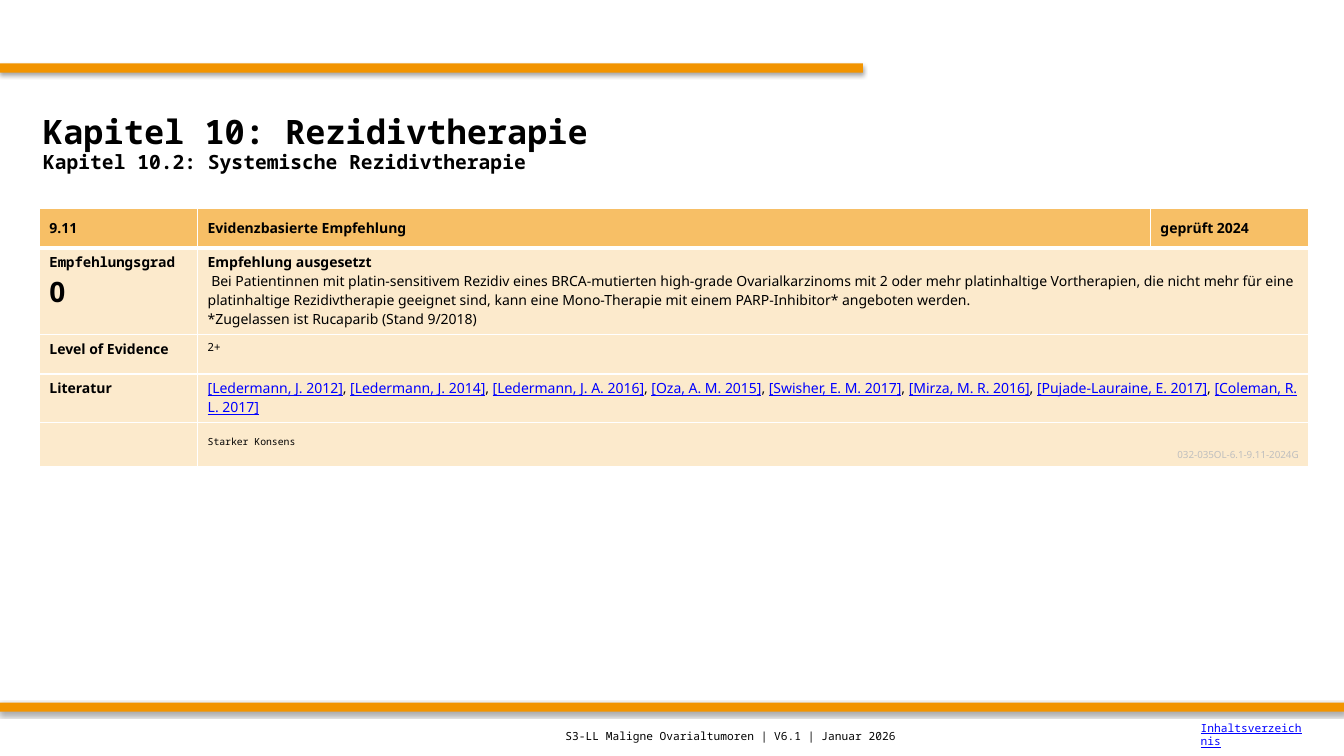
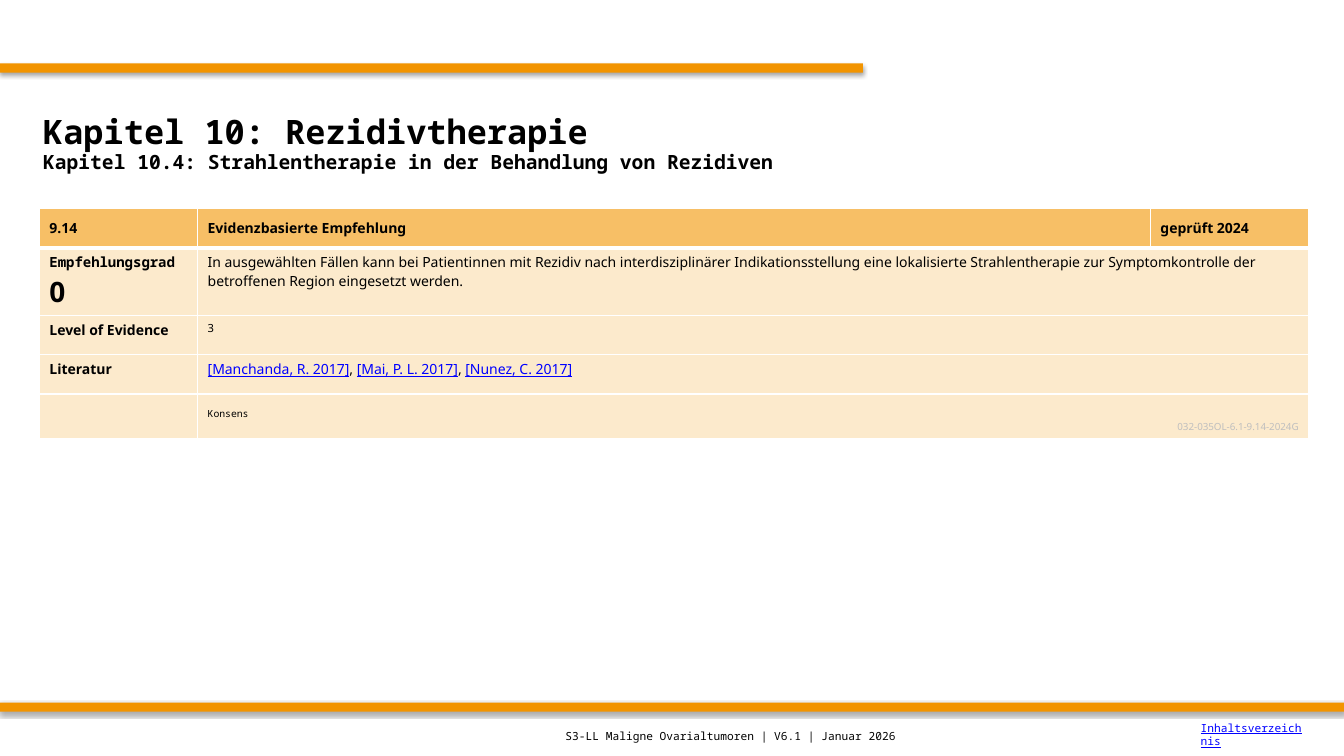
from dataclasses import dataclass, replace

from lxml import etree
from pptx import Presentation
from pptx.dml.color import RGBColor
from pptx.enum.shapes import MSO_SHAPE
from pptx.enum.text import MSO_ANCHOR, PP_ALIGN
from pptx.oxml.ns import qn
from pptx.util import Inches, Pt

SANS, MONO = "Noto Sans", "Noto Sans Mono"
ORANGE, HEADER_FILL, BODY_FILL = "F29400", "F7BF66", "FCEACC"
BLACK, WHITE, LINK_BLUE, GREY = "000000", "FFFFFF", "0000FF", "BFBFBF"

SLIDE_WIDTH, SLIDE_HEIGHT = 13.33, 7.5
COLUMN_WIDTHS = (1.57, 9.45, 1.57)
ROW_HEIGHT, CONSENSUS_HEIGHT = 0.39, 0.44
CHAPTER = "Kapitel 10: Rezidivtherapie"
FOOTER = "S3-LL Maligne Ovarialtumoren | V6.1 | Januar 2026"


@dataclass(frozen=True)
class Style:
    size: float
    name: str = SANS
    color: str = BLACK
    bold: bool = False
    underline: bool = False


TITLE = Style(24, MONO, bold=True)
SUBTITLE = replace(TITLE, size=14)
BODY = Style(10)
LABEL = replace(BODY, bold=True)
MONO_LABEL = replace(LABEL, name=MONO)
GRADE = replace(LABEL, size=20)
EVIDENCE = Style(8)
CITATION = replace(BODY, color=LINK_BLUE, underline=True)
CONSENSUS = Style(7, MONO)
CODE = Style(7, color=GREY)
FOOTER_TEXT = Style(8, MONO)
FOOTER_LINK = replace(FOOTER_TEXT, color=LINK_BLUE, underline=True)


@dataclass(frozen=True)
class Recommendation:
    subtitle: str
    number: str
    statement: tuple
    statement_height: float
    evidence: str
    literature: tuple
    literature_height: float
    consensus: str


RECOMMENDATIONS = (
    Recommendation(
        subtitle="Kapitel 10.2: Systemische Rezidivtherapie",
        number="9.11",
        statement=(
            ("Empfehlung ausgesetzt", LABEL),
            (" Bei Patientinnen mit platin-sensitivem Rezidiv eines BRCA-mutierten "
             "high-grade Ovarialkarzinoms mit 2 oder mehr platinhaltige Vortherapien, "
             "die nicht mehr für eine platinhaltige Rezidivtherapie geeignet sind, kann "
             "eine Mono-Therapie mit einem PARP-Inhibitor* angeboten werden.", BODY),
            ("*Zugelassen ist Rucaparib (Stand 9/2018)", BODY),
        ),
        statement_height=0.86,
        evidence="2+",
        literature=(
            "[Ledermann, J. 2012]", "[Ledermann, J. 2014]", "[Ledermann, J. A. 2016]",
            "[Oza, A. M. 2015]", "[Swisher, E. M. 2017]", "[Mirza, M. R. 2016]",
            "[Pujade-Lauraine, E. 2017]", "[Coleman, R. L. 2017]",
        ),
        literature_height=0.48,
        consensus="Starker Konsens",
    ),
    Recommendation(
        subtitle="Kapitel 10.4: Strahlentherapie in der Behandlung von Rezidiven",
        number="9.14",
        statement=(
            ("In ausgewählten Fällen kann bei Patientinnen mit Rezidiv nach "
             "interdisziplinärer Indikationsstellung eine lokalisierte Strahlentherapie "
             "zur Symptomkontrolle der betroffenen Region eingesetzt werden.", BODY),
        ),
        statement_height=0.67,
        evidence="3",
        literature=("[Manchanda, R. 2017]", "[Mai, P. L. 2017]", "[Nunez, C. 2017]"),
        literature_height=ROW_HEIGHT,
        consensus="Konsens",
    ),
)


def rgb(color):
    return RGBColor.from_string(color)


def add_run(paragraph, text, style):
    run = paragraph.add_run()
    run.text = text
    run.font.size = Pt(style.size)
    run.font.name = style.name
    run.font.bold = style.bold
    run.font.underline = style.underline
    run.font.color.rgb = rgb(style.color)


def write_lines(text_frame, lines):
    """Write one paragraph for each (text, style) pair."""
    for index, (text, style) in enumerate(lines):
        paragraph = text_frame.add_paragraph() if index else text_frame.paragraphs[0]
        add_run(paragraph, text, style)


def add_text(slide, box, *lines):
    shape = slide.shapes.add_textbox(*map(Inches, box))
    text_frame = shape.text_frame
    text_frame.word_wrap = True
    text_frame.vertical_anchor = MSO_ANCHOR.MIDDLE
    write_lines(text_frame, lines)
    return text_frame


def add_band(slide, top, width):
    band = slide.shapes.add_shape(
        MSO_SHAPE.RECTANGLE, Inches(0), Inches(top), Inches(width), Inches(0.09))
    band.fill.solid()
    band.fill.fore_color.rgb = rgb(ORANGE)
    band.line.fill.background()
    band.shadow.inherit = False
    effects = band.element.spPr.find(qn("a:effectLst"))
    shadow = etree.SubElement(
        effects, qn("a:outerShdw"), blurRad=str(Pt(3.1)), dist=str(Pt(1.8)),
        dir="5400000", algn="t", rotWithShape="0")
    color = etree.SubElement(shadow, qn("a:srgbClr"), val=BLACK)
    etree.SubElement(color, qn("a:alpha"), val="35000")


def add_frame(slide):
    """Add the bands and footer that every slide carries."""
    add_band(slide, 0.63, 8.56)
    add_band(slide, 6.97, SLIDE_WIDTH)
    add_text(slide, (5.51, 7.11, 5.51, 0.39), (FOOTER, FOOTER_TEXT))
    add_text(slide, (11.81, 7.09, 1.22, 0.39), ("Inhaltsverzeichnis", FOOTER_LINK))


def add_title(slide, box, subtitle):
    text_frame = add_text(slide, box, (CHAPTER, TITLE), (subtitle, SUBTITLE))
    for paragraph in text_frame.paragraphs:
        paragraph.line_spacing = 0.9


def style_cell(cell, fill, bottom_width):
    properties = cell._tc.get_or_add_tcPr()
    for side, width in (("L", 1), ("R", 1), ("T", 1), ("B", bottom_width)):
        line = etree.SubElement(properties, qn(f"a:ln{side}"), w=str(Pt(width)))
        solid = etree.SubElement(line, qn("a:solidFill"))
        etree.SubElement(solid, qn("a:srgbClr"), val=WHITE)
    cell.fill.solid()
    cell.fill.fore_color.rgb = rgb(fill)


def write_literature(cell, citations):
    paragraph = cell.text_frame.paragraphs[0]
    for index, citation in enumerate(citations):
        if index:
            add_run(paragraph, ", ", BODY)
        add_run(paragraph, citation, CITATION)


def add_recommendation_table(slide, left, top, recommendation):
    heights = (ROW_HEIGHT, recommendation.statement_height, ROW_HEIGHT,
               recommendation.literature_height, CONSENSUS_HEIGHT)
    table = slide.shapes.add_table(
        len(heights), len(COLUMN_WIDTHS), Inches(left), Inches(top),
        Inches(sum(COLUMN_WIDTHS)), Inches(sum(heights))).table
    table.first_row = table.horz_banding = False
    for column, width in zip(table.columns, COLUMN_WIDTHS):
        column.width = Inches(width)
    for index, (row, height) in enumerate(zip(table.rows, heights)):
        row.height = Inches(height)
        for cell in row.cells:
            if index == 0:
                style_cell(cell, HEADER_FILL, 3)
            else:
                style_cell(cell, BODY_FILL, 1)
        if index:
            table.cell(index, 1).merge(table.cell(index, 2))

    headings = (recommendation.number, "Evidenzbasierte Empfehlung", "geprüft 2024")
    for column, heading in enumerate(headings):
        cell = table.cell(0, column)
        cell.vertical_anchor = MSO_ANCHOR.MIDDLE
        write_lines(cell.text_frame, [(heading, LABEL)])

    code = f"032-035OL-6.1-{recommendation.number}-2024G"
    contents = {
        (1, 0): [("Empfehlungsgrad", MONO_LABEL), ("0", GRADE)],
        (1, 1): recommendation.statement,
        (2, 0): [("Level of Evidence", LABEL)],
        (2, 1): [(recommendation.evidence, EVIDENCE)],
        (3, 0): [("Literatur", LABEL)],
        (4, 1): [(recommendation.consensus, CONSENSUS), (code, CODE)],
    }
    for position, lines in contents.items():
        write_lines(table.cell(*position).text_frame, lines)
    write_literature(table.cell(3, 1), recommendation.literature)

    consensus_cell = table.cell(4, 1)
    consensus_cell.vertical_anchor = MSO_ANCHOR.BOTTOM
    consensus_cell.text_frame.paragraphs[1].alignment = PP_ALIGN.RIGHT


def add_recommendation_slide(presentation, recommendation):
    slide = presentation.slides.add_slide(presentation.slide_layouts[6])
    add_frame(slide)
    add_title(slide, (0.33, 0.85, 12.67, 1.17), recommendation.subtitle)
    add_recommendation_table(slide, 0.39, 2.07, recommendation)


def main():
    presentation = Presentation()
    presentation.slide_width = Inches(SLIDE_WIDTH)
    presentation.slide_height = Inches(SLIDE_HEIGHT)
    for recommendation in RECOMMENDATIONS:
        add_recommendation_slide(presentation, recommendation)
    presentation.save("out.pptx")


if __name__ == "__main__":
    main()
